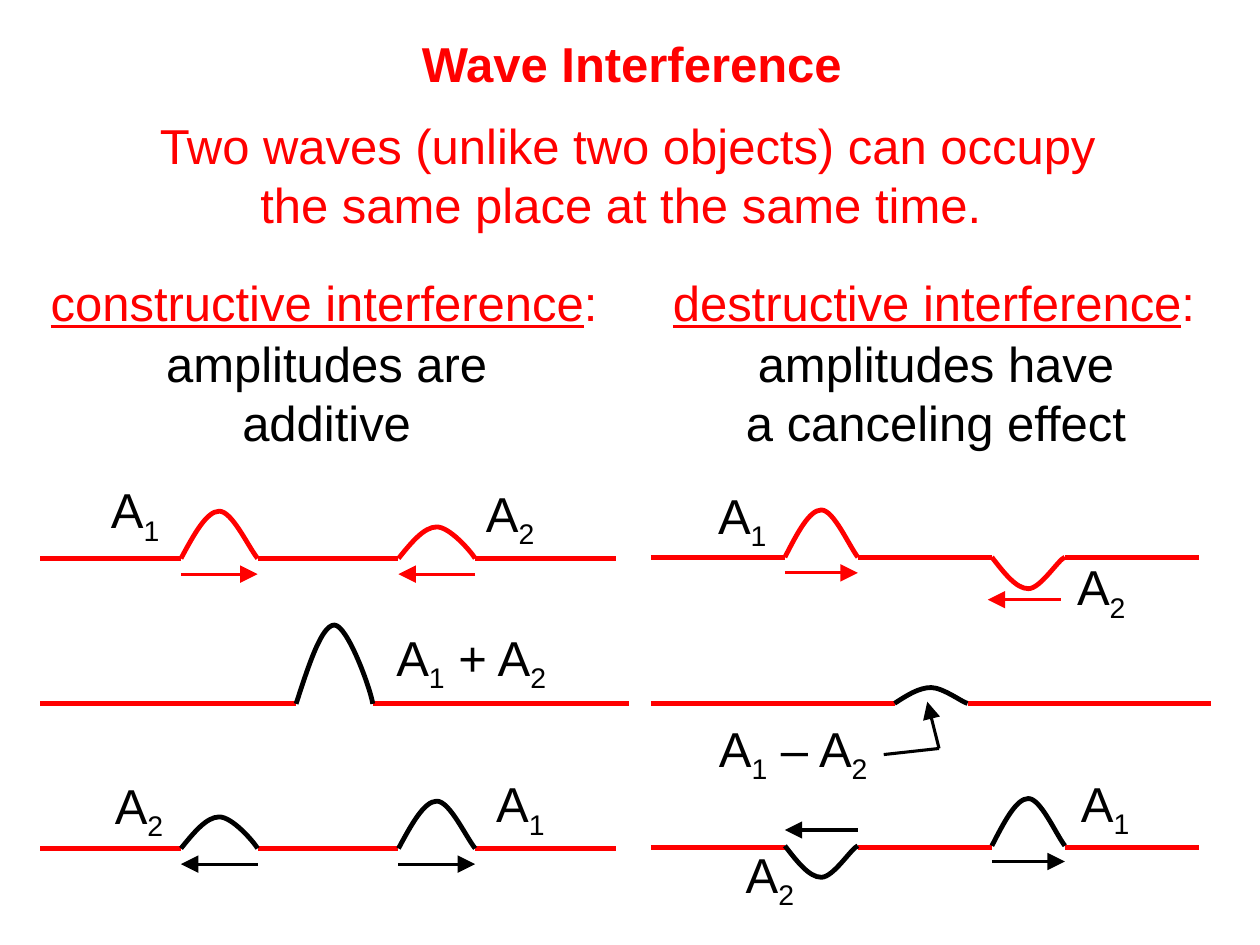
from lxml import etree
from pptx import Presentation
from pptx.dml.color import RGBColor
from pptx.enum.shapes import MSO_CONNECTOR
from pptx.enum.text import MSO_ANCHOR, MSO_AUTO_SIZE, PP_ALIGN
from pptx.oxml.ns import qn
from pptx.util import Pt

STRAIGHT = MSO_CONNECTOR.STRAIGHT
MIDDLE = MSO_ANCHOR.MIDDLE
FIT_SHAPE = MSO_AUTO_SIZE.SHAPE_TO_FIT_TEXT
LEFT, CENTER = PP_ALIGN.LEFT, PP_ALIGN.CENTER
RED, BLACK = "FF0000", "000000"
FONT, SIZE = "Arial", 28
WAVE_WIDTH, ARROW_WIDTH = 2.75, 1.75


def color(hex_code):
    return RGBColor.from_string(hex_code)


def plain(*lines):
    return [[(line, "plain")] for line in lines]


class WaveSlide:
    def __init__(self, slide):
        self.slide = slide

    def text(self, left, top, width, height, lines, ink=BLACK, align=LEFT):
        box = self.slide.shapes.add_textbox(Pt(left), Pt(top), Pt(width), Pt(height))
        frame = box.text_frame
        frame.word_wrap = False
        frame.auto_size = FIT_SHAPE
        frame.vertical_anchor = MIDDLE
        for index, line in enumerate(lines):
            paragraph = frame.add_paragraph() if index else frame.paragraphs[0]
            paragraph.alignment = align
            for content, look in line:
                run = paragraph.add_run()
                run.text = content
                font = run.font
                font.name, font.size = FONT, Pt(SIZE)
                font.color.rgb = color(ink)
                if look == "bold":
                    font.bold = True
                elif look == "underline":
                    font.underline = True
                elif look == "subscript":
                    run._r.get_or_add_rPr().set("baseline", "-25000")

    def amplitude(self, left, top, *parts, width=51.8):
        looks = ("plain", "subscript") * (len(parts) // 2)
        self.text(left, top, width, 41, [list(zip(parts, looks))])

    def line(self, x1, y1, x2, y2, ink=RED, weight=WAVE_WIDTH, arrow=False):
        connector = self.slide.shapes.add_connector(STRAIGHT, Pt(x1), Pt(y1), Pt(x2), Pt(y2))
        connector.line.color.rgb = color(ink)
        connector.line.width = Pt(weight)
        if arrow:
            outline = connector.line._get_or_add_ln()
            etree.SubElement(outline, qn("a:tailEnd"), type="triangle", w="lg", len="lg")
        etree.SubElement(connector._element.spPr, qn("a:effectLst"))

    def arrow(self, x1, y1, x2, y2, ink):
        self.line(x1, y1, x2, y2, ink, ARROW_WIDTH, True)

    def string(self, left, y, flat, pulse, flats):
        for index in range(flats):
            start = left + index * (flat + pulse)
            self.line(start, y, start + flat, y)

    def pulse(self, left, y, width, height, landing, ink):
        profile = ((1 / 6, 0.5), (1 / 3, 1), (0.5, 1), (2 / 3, 1), landing, (1, 0))
        controls = [(Pt(left + x * width), Pt(y - rise * height)) for x, rise in profile]
        builder = self.slide.shapes.build_freeform(Pt(left), Pt(y))
        builder.add_line_segments(controls, close=False)
        curve = builder.convert_to_shape()
        segments = list(curve._element.iter(qn("a:lnTo")))
        for first in range(0, len(segments), 3):
            cubic = etree.Element(qn("a:cubicBezTo"))
            segments[first].addprevious(cubic)
            for segment in segments[first:first + 3]:
                cubic.append(segment[0])
                segment.getparent().remove(segment)
        curve.shadow.inherit = False
        curve.fill.background()
        curve.line.color.rgb = color(ink)
        curve.line.width = Pt(WAVE_WIDTH)


def main():
    deck = Presentation()
    deck.slide_width, deck.slide_height = Pt(720), Pt(540)
    page = WaveSlide(deck.slides.add_slide(deck.slide_layouts[6]))

    page.text(234, 15.4, 263.5, 41, [[("Wave Interference", "bold")]], RED)
    page.text(80.7, 62, 555.8, 75, plain("Two waves (unlike two objects) can occupy",
                                         "the same place at the same time. "), RED, CENTER)
    for left, width, heading in ((21.9, 335.5, "constructive interference"),
                                 (377.4, 321.8, "destructive interference")):
        page.text(left, 152, width, 41, [[(heading, "underline"), (":", "plain")]], RED)
    page.text(86.5, 186.7, 200.2, 75, plain("amplitudes are", "additive"), align=CENTER)
    page.text(417.5, 186.7, 234.7, 75, plain("amplitudes have", "a canceling effect"),
              align=CENTER)

    tall, low, summed = (0.87, 0.27), (0.94, 0.24), (0.97, 0.2)
    trough, remainder = (0.91, 0.08), (0.95, 0)

    left, flat, width = 22.9, 80.5, 43.8
    before, overlap, after = 319.1, 402.2, 484.8
    first, second = left + flat, left + 2 * flat + width
    middle = left + 146.3
    page.string(left, before, flat, width, 3)
    page.string(left, overlap, 146.3, width, 2)
    page.string(left, after, flat, width, 3)
    page.pulse(first, before, width, 27, tall, RED)
    page.pulse(second, before, width, 18, low, RED)
    page.arrow(first, before + 9, first + width, before + 9, RED)
    page.arrow(second + width, before + 9, second, before + 9, RED)
    page.pulse(middle, overlap, width, 45, summed, BLACK)
    page.pulse(first, after, width, 18, low, BLACK)
    page.pulse(second, after, width, 27, tall, BLACK)
    page.arrow(first + width, after + 9, first, after + 9, BLACK)
    page.arrow(second, after + 9, second + width, after + 9, BLACK)
    page.amplitude(56.3, 272.9, "A", "1")
    page.amplitude(270.6, 275, "A", "2")
    page.amplitude(219.4, 357.1, "A", "1", " + A", "2", width=105)
    page.amplitude(58.5, 441.7, "A", "2")
    page.amplitude(276.4, 440.9, "A", "1")

    left, flat, width = 371.9, 76.6, 41.7
    before, overlap, after = 318.4, 401.9, 484.1
    first, second = left + flat, left + 2 * flat + width
    middle = left + 139.3
    page.string(left, before, flat, width, 3)
    page.string(left, overlap, 139.3, width, 2)
    page.string(left, after, flat, width, 3)
    page.pulse(first, before, width, 27, tall, RED)
    page.pulse(second, before, width, -18, trough, RED)
    page.arrow(first, before + 9, first + width, before + 9, RED)
    page.arrow(606.2, 342.7, 564.5, 342.7, RED)
    page.pulse(middle, overlap, width, 9, remainder, BLACK)
    page.arrow(536.6, 427.7, 529.9, 401, BLACK)
    page.line(536.6, 427.7, 505, 431.2, BLACK, ARROW_WIDTH)
    page.pulse(first, after - 0.8, width, -18, trough, BLACK)
    page.pulse(second, after - 0.8, width, 27, tall, BLACK)
    page.arrow(first + width, after - 9.8, first, after - 9.8, BLACK)
    page.arrow(second, after + 8.2, second + width, after + 8.2, BLACK)
    page.amplitude(403.2, 275.8, "A", "1")
    page.amplitude(608.4, 316.8, "A", "2")
    page.amplitude(403.7, 409, "A", "1", " – A", "2", width=104.4)
    page.amplitude(419, 481, "A", "2")
    page.amplitude(610.6, 440.6, "A", "1")

    deck.save("out.pptx")


if __name__ == "__main__":
    main()
